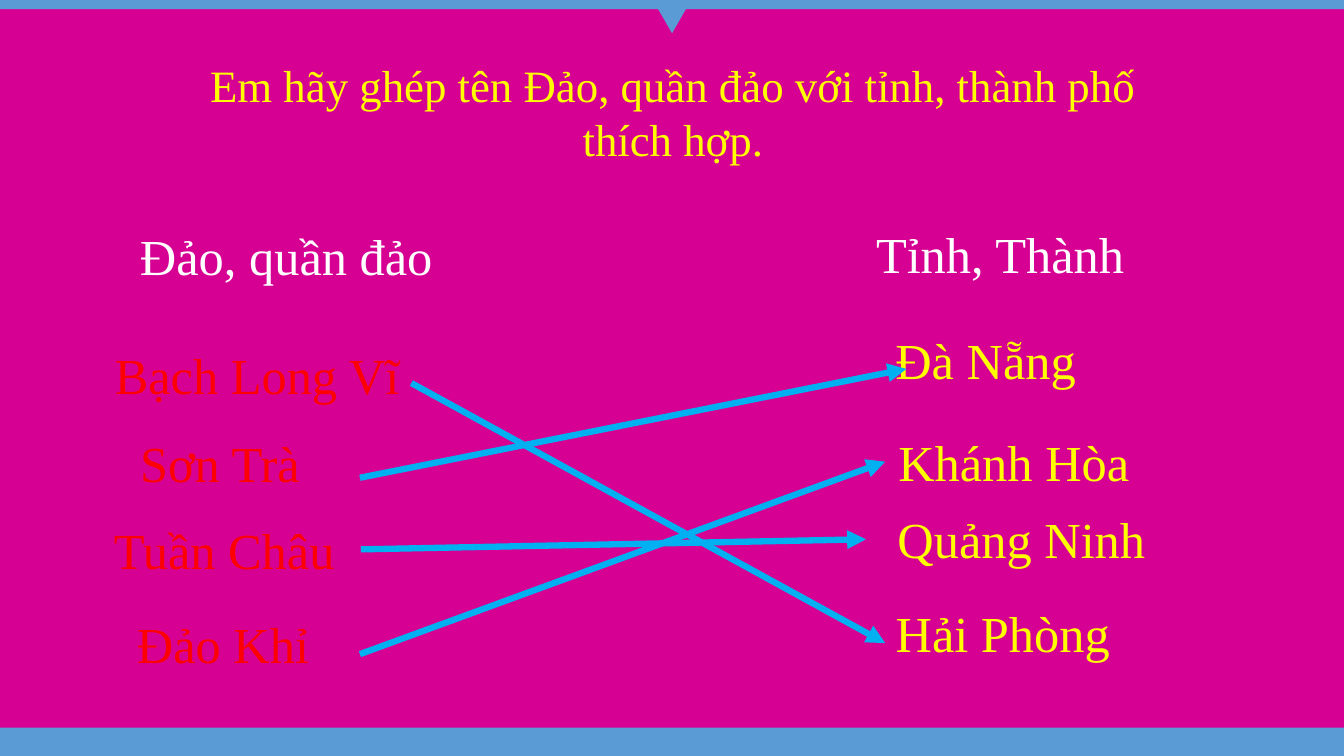
from lxml import etree
from pptx import Presentation
from pptx.dml.color import RGBColor
from pptx.enum.shapes import MSO_CONNECTOR, MSO_SHAPE
from pptx.enum.text import MSO_ANCHOR, MSO_AUTO_SIZE, PP_ALIGN
from pptx.oxml.ns import qn
from pptx.util import Inches, Pt

WIDE, HIGH = 13.33, 7.5
FONT = "Times New Roman"
LEFT, MID = PP_ALIGN.LEFT, PP_ALIGN.CENTER
RECT, TIP = MSO_SHAPE.RECTANGLE, MSO_SHAPE.ISOSCELES_TRIANGLE
TOP, FIXED = MSO_ANCHOR.TOP, MSO_AUTO_SIZE.NONE
STRAIGHT = MSO_CONNECTOR.STRAIGHT
COLORS = {"back": "D60093", "band": "5B9BD5", "yellow": "FFFF00",
          "red": "FF0000", "white": "FFFFFF", "arrow": "00B0F0"}
ROW = 0.71


def color(name):
    return RGBColor.from_string(COLORS[name])


def write(frame, text, size, tone, align):
    frame.word_wrap = True
    frame.auto_size = FIXED
    frame.vertical_anchor = TOP
    frame.text = text
    line = frame.paragraphs[0]
    line.alignment = align
    line.font.name = FONT
    line.font.size = Pt(size)
    line.font.color.rgb = color(tone)


def add_frame(slide, wide, high):
    """Bands at both edges and the pointer under the top one."""
    slide.background.fill.solid()
    slide.background.fill.fore_color.rgb = color("back")
    tip = 0.38
    parts = [(RECT, 0, high - 0.28, wide, 0.3, 0),
             (RECT, 0, 0, wide, 0.09, 0),
             (TIP, (wide - tip) / 2, 0, tip, 0.33, 180)]
    for kind, x, y, w, h, turn in parts:
        part = slide.shapes.add_shape(kind, *map(Inches, (x, y, w, h)))
        part.rotation = turn
        part.shadow.inherit = False
        part.fill.solid()
        part.fill.fore_color.rgb = color("band")
        part.line.fill.background()


def add_title(slide, text, x, y, w, h):
    title = slide.shapes.title
    title.left, title.top, title.width, title.height = map(Inches, (x, y, w, h))
    write(title.text_frame, text, 32, "yellow", MID)


def add_column(slide, x, y, head, items, tone, align):
    """A white heading with its items; each is text, right, down, width."""
    rows = [(head, "white", LEFT)] + [(item, tone, align) for item in items]
    for (text, right, down, wide), shade, side in rows:
        box = slide.shapes.add_textbox(
            *map(Inches, (x + right, y + down, wide, ROW)))
        write(box.text_frame, text, 36, shade, side)


def add_arrows(slide, x, y, pairs):
    """Answer arrows, with ends measured from the corner x, y."""
    for x1, y1, x2, y2 in pairs:
        arrow = slide.shapes.add_connector(
            STRAIGHT, *map(Inches, (x + x1, y + y1, x + x2, y + y2)))
        arrow.line.color.rgb = color("arrow")
        arrow.line.width = Pt(4.5)
        etree.SubElement(arrow.line._get_or_add_ln(), qn("a:tailEnd"),
                         type="triangle")
        etree.SubElement(arrow._element.spPr, qn("a:effectLst"))


def main():
    deck = Presentation()
    deck.slide_width, deck.slide_height = Inches(WIDE), Inches(HIGH)
    slide = deck.slides.add_slide(deck.slide_layouts[5])
    add_frame(slide, WIDE, HIGH)
    add_title(slide, "Em hãy ghép tên Đảo, quần đảo với tỉnh, "
              "thành phố thích hợp.", 1.61, 0.52, 10.13, 1.18)

    # Islands on the left, provinces on the right
    add_column(slide, 1.03, 2.16, ("Đảo, quần đảo", 0.26, 0.02, 3.27),
               [("Bạch Long Vĩ", 0.01, 1.2, 3.27),
                ("Sơn Trà", 0.26, 2.08, 2.55),
                ("Tuần Châu", 0, 2.94, 2.55),
                ("Đảo Khỉ", 0.23, 3.87, 2.55)], "red", LEFT)
    add_column(slide, 8.59, 2.16, ("Tỉnh, Thành", 0, 0, 3.08),
               [("Đà Nẵng", 0, 1.06, 2.37),
                ("Khánh Hòa", 0.19, 2.07, 2.55),
                ("Quảng Ninh", 0.19, 2.83, 2.7),
                ("Hải Phòng", 0.08, 3.76, 2.55)], "yellow", MID)

    # Each island points to its province
    add_arrows(slide, 3.57, 3.66, [(0.51, 0.14, 5.21, 2.72),
                                   (0, 1.08, 5.42, 0),
                                   (0.01, 1.79, 5.02, 1.69),
                                   (0, 2.83, 5.21, 0.92)])
    deck.save("out.pptx")


if __name__ == "__main__":
    main()
